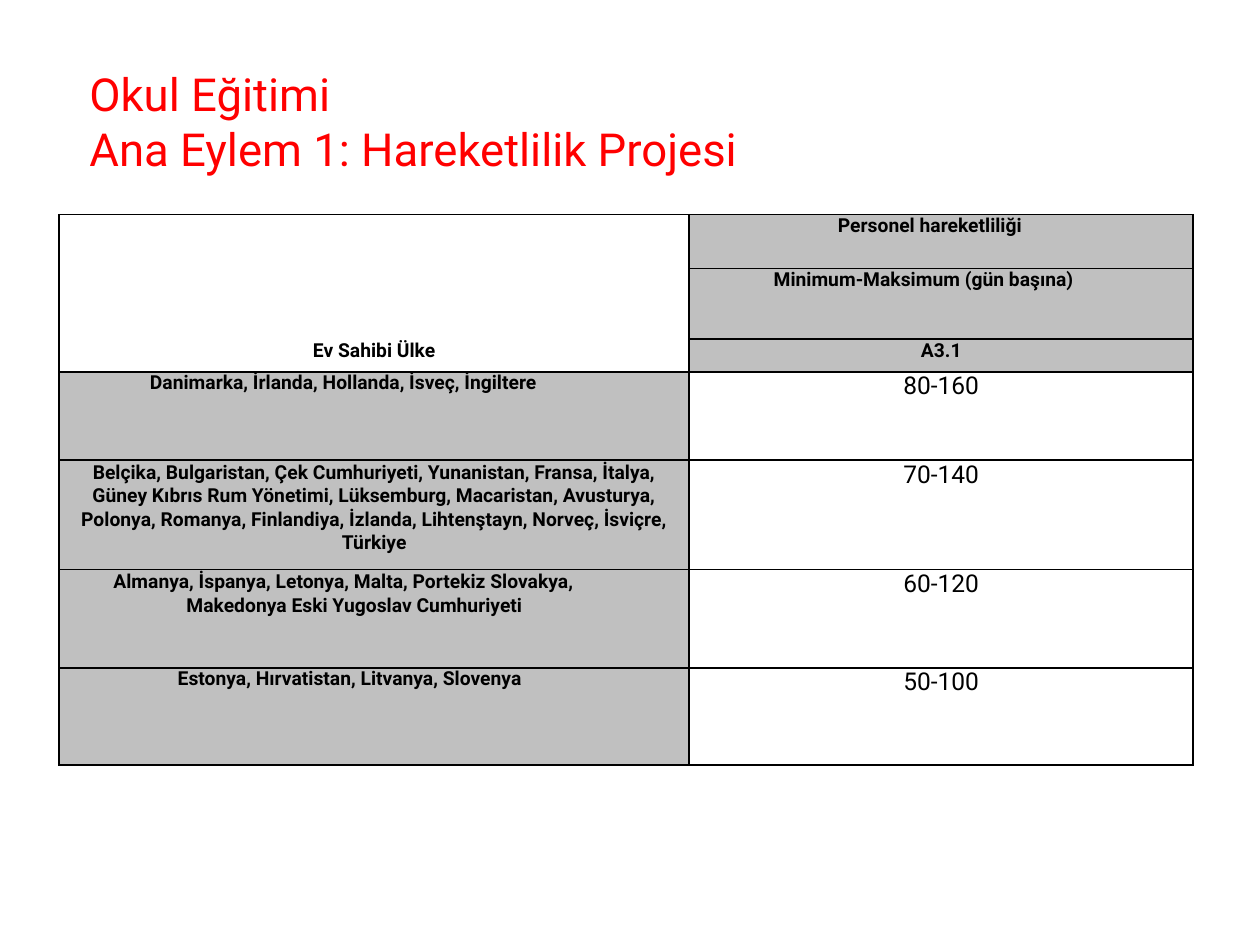
from pptx import Presentation
from pptx.util import Inches, Pt
from pptx.dml.color import RGBColor
from pptx.enum import text
from pptx.oxml.ns import qn
from lxml import etree

HUES = {"title": "FF0000", "ink": "000000", "grey": "C0C0C0"}
FACE = "Roboto"
CENTER = text.PP_ALIGN.CENTER

deck = Presentation()
deck.slide_width, deck.slide_height = Inches(10), Inches(7.5)
wide, high = deck.slide_width, deck.slide_height
slide = deck.slides.add_slide(deck.slide_layouts[6])


def write(para, words, size, hue="ink", bold=False, left=0, first=0, right=0):
    para.text = words
    props = para._p.get_or_add_pPr()
    for key, inch in (("marL", left), ("indent", first), ("marR", right)):
        props.set(key, str(Inches(inch)))
    font = para.font
    font.name, font.size, font.bold = FACE, Pt(size), bold
    font.color.rgb = RGBColor.from_string(HUES[hue])


def edge(cell, sides):
    props = cell._tc.get_or_add_tcPr()
    for spot, side in enumerate("LRTB"):
        line = etree.Element(qn(f"a:ln{side}"), w=str(Pt(1)))
        if side in sides:
            fill = etree.SubElement(line, qn("a:solidFill"))
            etree.SubElement(fill, qn("a:srgbClr"), val=HUES["ink"])
        else:
            etree.SubElement(line, qn("a:noFill"))
        props.insert(spot, line)


# Title
box = slide.shapes.add_textbox(int(wide * 0.07), int(high * 0.07),
                               int(wide * 0.52), int(high * 0.11))
frame = box.text_frame
frame.word_wrap = True
frame.margin_left = frame.margin_right = frame.margin_top = frame.margin_bottom = 0
write(frame.paragraphs[0], "Okul Eğitimi", 26, "title", left=0.01)
write(frame.add_paragraph(), "Ana Eylem 1: Hareketlilik Projesi", 26, "title", left=0.01)

# Rows: height, left cell, right cell; a cell is words, then indents (none = centred)
rows = [
    (0.43, ("", {}), ("Personel hareketliliği", {"left": 1.18})),
    (0.56, ("", {}), ("Minimum-Maksimum (gün başına)", {"left": 0.67})),
    (0.26, ("Ev Sahibi Ülke", {}), ("A3.1", {})),
    (0.7, ("Danimarka, İrlanda, Hollanda, İsveç, İngiltere", {"left": 0.72}),
     ("80-160", {})),
    (0.87, ("Belçika, Bulgaristan, Çek Cumhuriyeti, Yunanistan, Fransa, İtalya, "
            "Güney Kıbrıs Rum Yönetimi, Lüksemburg, Macaristan, Avusturya, "
            "Polonya, Romanya, Finlandiya, İzlanda, Lihtenştayn, Norveç, İsviçre, "
            "Türkiye", {"left": 0.15, "right": 0.15}),
     ("70-140", {})),
    (0.78, ("Almanya, İspanya, Letonya, Malta, Portekiz Slovakya, "
            "Makedonya Eski Yugoslav Cumhuriyeti",
            {"left": 1.01, "first": -0.58, "right": 0.5}),
     ("60-120", {})),
    (0.77, ("Estonya, Hırvatistan, Litvanya, Slovenya", {"left": 0.94}),
     ("50-100", {})),
]
heads = 3

# Table
grid = slide.shapes.add_table(len(rows), 2, int(wide * 0.047), int(high * 0.227),
                              int(wide * 0.9), Inches(sum(r[0] for r in rows))).table
grid.columns[0].width, grid.columns[1].width = int(wide * 0.5), int(wide * 0.4)
for r, (tall, *pair) in enumerate(rows):
    grid.rows[r].height = Inches(tall)
    for c, (words, dents) in enumerate(pair):
        cell = grid.cell(r, c)
        cell.margin_left = cell.margin_right = cell.margin_top = cell.margin_bottom = 0
        head = r < heads
        if head == (c == 1):
            cell.fill.solid()
            cell.fill.fore_color.rgb = RGBColor.from_string(HUES["grey"])
        else:
            cell.fill.background()
        value = c == 1 and not head
        para = cell.text_frame.paragraphs[0]
        write(para, words, 14 if value else 11, bold=not value, **dents)
        if not dents or dents["left"] == dents.get("right"):
            para.alignment = CENTER
        if "right" in dents:
            para.line_spacing = 1.05
        # The left heading is one open block over three rows
        sides = "LRTB"
        if head and c == 0:
            sides = "LR" + "T" * (r == 0) + "B" * (r == heads - 1)
        edge(cell, sides)

deck.save("out.pptx")
